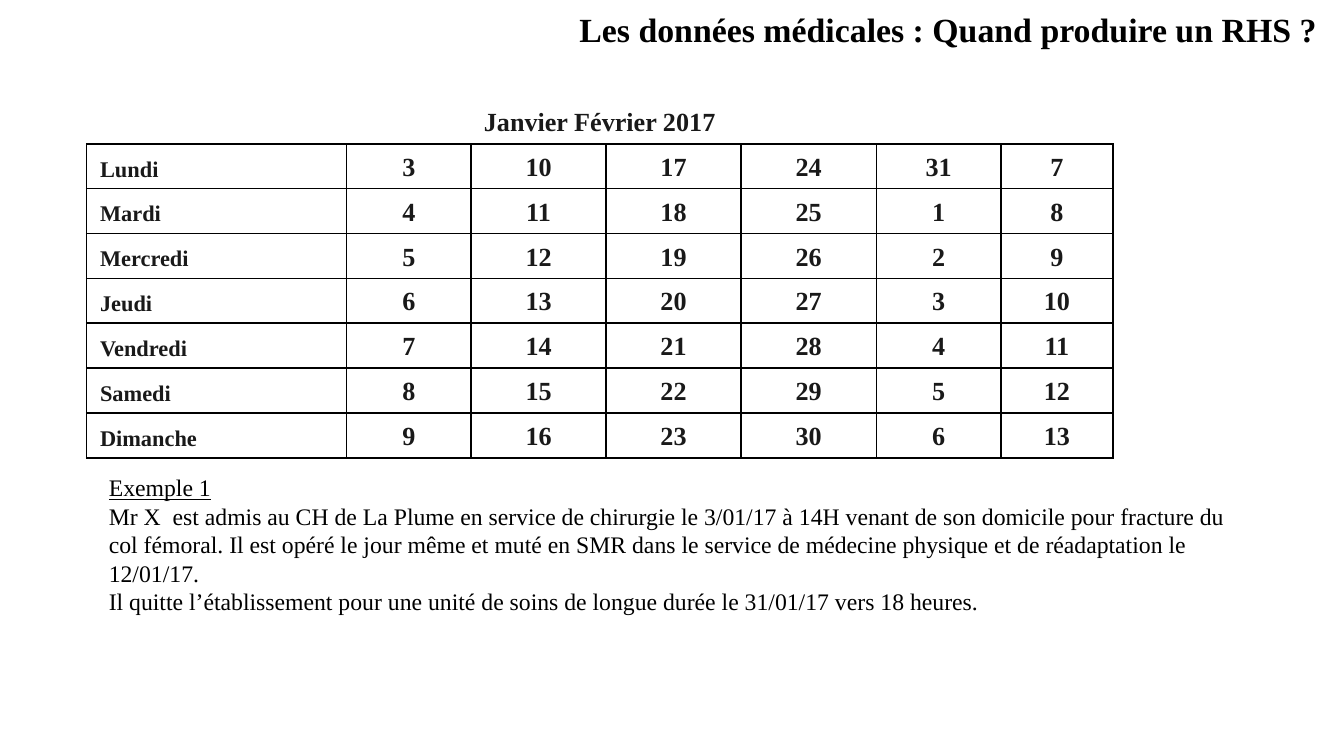
from lxml.etree import SubElement
from pptx import Presentation
from pptx.dml.color import RGBColor
from pptx.enum.text import MSO_ANCHOR as Anchor, MSO_AUTO_SIZE as AutoSize, PP_ALIGN as Align
from pptx.oxml.ns import qn
from pptx.util import Pt

DAYS = ["Lundi", "Mardi", "Mercredi", "Jeudi", "Vendredi", "Samedi", "Dimanche"]
COLUMN_WIDTHS = [139.3, 66.7, 72.3, 72.3, 72.6, 66.7, 60]
ROW_HEIGHT = 23.33
FIRST_MONDAY = 3
DAYS_IN_JANUARY = 31
EXAMPLE = [
    "Mr X  est admis au CH de La Plume en service de chirurgie le 3/01/17 à 14H "
    "venant de son domicile pour fracture du col fémoral. Il est opéré le jour même "
    "et muté en SMR dans le service de médecine physique et de réadaptation le 12/01/17.",
    "Il quitte l’établissement pour une unité de soins de longue durée le 31/01/17 "
    "vers 18 heures.",
]


def color(hex_value):
    return RGBColor.from_string(hex_value)


class SlideBuilder:
    font_name = "Times New Roman"
    black = "000000"
    cell_ink = "191919"
    hanging = Pt(27)

    def __init__(self, slide):
        self.slide = slide

    def add_text(self, paragraph, text, ink, **formats):
        run = paragraph.add_run()
        run.text = text
        for name, value in {"name": self.font_name, **formats}.items():
            setattr(run.font, name, value)
        run.font.color.rgb = color(ink)

    def text_box(self, left, top, width, height, lines, wrap=True):
        """Add a box from (text, formats) pairs, one paragraph each."""
        shape = self.slide.shapes.add_textbox(Pt(left), Pt(top), Pt(width), Pt(height))
        frame = shape.text_frame
        frame.word_wrap = wrap
        frame.auto_size = AutoSize.SHAPE_TO_FIT_TEXT
        for index, (text, formats) in enumerate(lines):
            paragraph = frame.add_paragraph() if index else frame.paragraphs[0]
            self.add_text(paragraph, text, self.black, **formats)

    def borders(self, cell, sides):
        """Draw the given sides among L, R, T, B and clear the others."""
        properties = cell._tc.get_or_add_tcPr()
        for index, side in enumerate("LRTB"):
            line = properties.makeelement(qn(f"a:ln{side}"), {"w": str(Pt(1))})
            properties.insert(index, line)
            if side in sides:
                fill = SubElement(line, qn("a:solidFill"))
                SubElement(fill, qn("a:srgbClr"), val=self.black)
            else:
                SubElement(line, qn("a:noFill"))

    def cell(self, cell, text, size, align, sides="LRTB"):
        formats = {
            "vertical_anchor": Anchor.BOTTOM,
            "margin_left": Pt(7.2), "margin_right": Pt(7.2),
            "margin_top": Pt(3.6), "margin_bottom": Pt(3.6),
        }
        for name, value in formats.items():
            setattr(cell, name, value)
        cell.fill.background()
        self.borders(cell, sides)
        paragraph = cell.text_frame.paragraphs[0]
        paragraph.alignment = align
        indents = paragraph._p.get_or_add_pPr()
        indents.set("marL", str(self.hanging))
        indents.set("indent", str(-self.hanging))
        if text:
            self.add_text(paragraph, text, self.cell_ink, size=Pt(size), bold=True)

    def calendar(self, left, top, heading):
        row_count, column_count = len(DAYS) + 1, len(COLUMN_WIDTHS)
        table = self.slide.shapes.add_table(
            row_count, column_count, Pt(left), Pt(top),
            Pt(sum(COLUMN_WIDTHS)), Pt(ROW_HEIGHT * row_count)).table
        table.first_row = table.horz_banding = False
        for column, width in zip(table.columns, COLUMN_WIDTHS):
            column.width = Pt(width)
        for row in table.rows:
            row.height = Pt(ROW_HEIGHT)

        table.cell(0, 0).merge(table.cell(0, column_count - 1))
        for column in range(column_count):
            self.cell(table.cell(0, column), "" if column else heading, 14, Align.CENTER, "B")
        for row, day in enumerate(DAYS):
            self.cell(table.cell(row + 1, 0), day, 12, Align.LEFT)
            for week in range(column_count - 1):
                date = (FIRST_MONDAY + row + 7 * week - 1) % DAYS_IN_JANUARY + 1
                self.cell(table.cell(row + 1, week + 1), str(date), 14, Align.CENTER)


def main():
    presentation = Presentation()
    presentation.slide_width, presentation.slide_height = Pt(720), Pt(405)
    builder = SlideBuilder(presentation.slides.add_slide(presentation.slide_layouts[6]))
    builder.text_box(
        303.3, 1.3, 414, 29.5,
        [("Les données médicales : Quand produire un RHS ?", {"size": Pt(18.1), "bold": True})],
        wrap=False)
    builder.calendar(46.4, 53, "Janvier Février 2017")
    body = {"size": Pt(12.7)}
    builder.text_box(
        51.2, 250, 622, 84.2,
        [("Exemple 1", {**body, "underline": True})] + [(text, body) for text in EXAMPLE])
    presentation.save("out.pptx")


if __name__ == "__main__":
    main()
